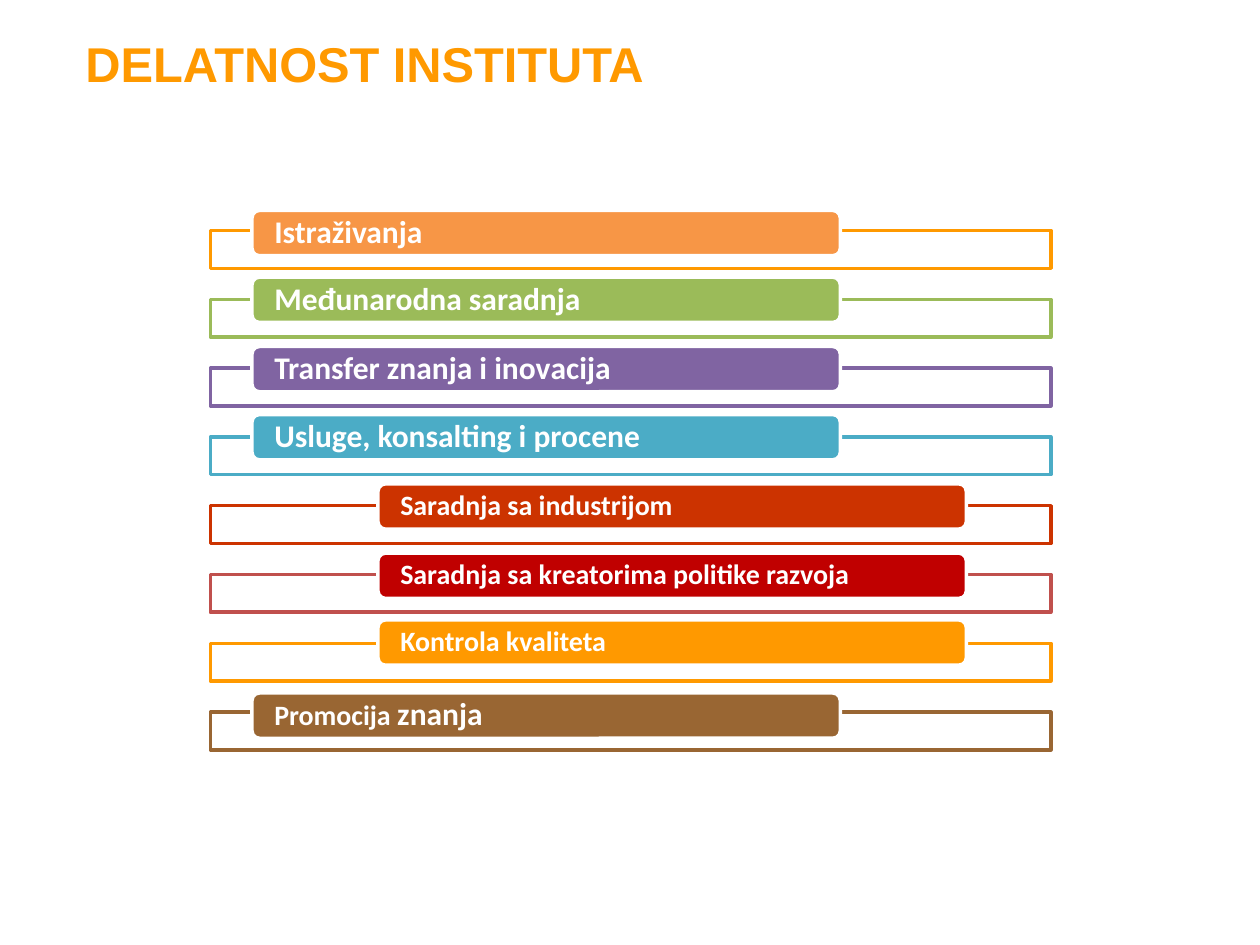
"""Build a slide listing the institute's activities as labelled frames."""
from pptx import Presentation
from pptx import util as u
from pptx.dml.color import RGBColor
from pptx.enum import shapes, text

COLORS = {
    "white": "FFFFFF", "amber": "FF9900", "orange": "F79646",
    "green": "9BBB59", "purple": "8064A2", "teal": "4BACC6",
    "rust": "CC3300", "rose": "C0504D", "red": "C00000", "brown": "996633",
}
FRAME_TOP, FRAME_PITCH = 1.83, 0.546
MAIN_LEFT, SUB_LEFT = 2, 3

ACTIVITIES = [
    (MAIN_LEFT, 1.67, "amber", "orange", [("Istraživanja", 18)]),
    (MAIN_LEFT, 2.2, "green", "green", [("Međunarodna saradnja", 18)]),
    (MAIN_LEFT, 2.75, "purple", "purple", [("Transfer znаnjа i inovаcijа", 18)]),
    (MAIN_LEFT, 3.29, "teal", "teal", [("Usluge, konsаlting i procene", 18)]),
    (SUB_LEFT, 3.84, "rust", "rust", [("Saradnja sa industrijom", 16)]),
    (SUB_LEFT, 4.39, "rose", "red", [("Saradnja sa kreatorima politike razvoja", 16)]),
    (SUB_LEFT, 4.92, "amber", "amber", [("Kontrola kvaliteta", 16)]),
    (MAIN_LEFT, 5.5, "brown", "brown", [("Promocija ", 16), ("znanja", 18)]),
]


def rgb(name):
    """Return the named palette colour."""
    return RGBColor.from_string(COLORS[name])


def write(holder, runs, *, font="Calibri", color="white", spacing=None,
          anchor=text.MSO_ANCHOR.MIDDLE, side=0.16, top=0):
    """Write bold, left-aligned runs of (wording, size) into a shape."""
    frame = holder.text_frame
    frame.word_wrap = True
    frame.vertical_anchor = anchor
    frame.margin_left = frame.margin_right = u.Inches(side)
    frame.margin_top, frame.margin_bottom = u.Inches(top), 0
    paragraph = frame.paragraphs[0]
    paragraph.alignment = text.PP_ALIGN.LEFT
    paragraph.line_spacing = spacing
    for wording, size in runs:
        run = paragraph.add_run()
        run.text = wording
        run.font.name, run.font.size, run.font.bold = font, u.Pt(size), True
        run.font.color.rgb = rgb(color)


def add_box(slide, kind, left, top, width, height, fill, line):
    """Add a filled and outlined preset shape."""
    box = slide.shapes.add_shape(kind, *map(u.Inches, (left, top, width, height)))
    box.shadow.inherit = False
    box.fill.solid()
    box.fill.fore_color.rgb = rgb(fill)
    box.line.color.rgb = rgb(line)
    box.line.width = u.Pt(2)
    return box


def add_activity(slide, index, left, top, outline, fill, runs):
    """Add one activity: a wide frame with a label across its upper edge."""
    add_box(slide, shapes.MSO_SHAPE.RECTANGLE, 1.67,
            FRAME_TOP + index * FRAME_PITCH, 6.67, 0.3, "white", outline)
    label = add_box(slide, shapes.MSO_SHAPE.ROUNDED_RECTANGLE,
                    left, top, 4.67, 0.36, fill, "white")
    write(label, runs, spacing=0.9)


def add_title(slide, wording):
    """Add the slide heading."""
    title = slide.shapes.add_textbox(*map(u.Inches, (0.58, 0.17, 5.42, 0.92)))
    write(title, [(wording, 27.9)], font="Arial", color="amber",
          anchor=text.MSO_ANCHOR.TOP, side=0.1, top=0.1)


def main():
    """Build and save the slide."""
    deck = Presentation()
    deck.slide_width, deck.slide_height = u.Inches(10), u.Inches(7.5)
    slide = deck.slides.add_slide(deck.slide_layouts[6])
    for index, activity in enumerate(ACTIVITIES):
        add_activity(slide, index, *activity)
    add_title(slide, "DELATNOST INSTITUTA")
    deck.save("out.pptx")


if __name__ == "__main__":
    main()
